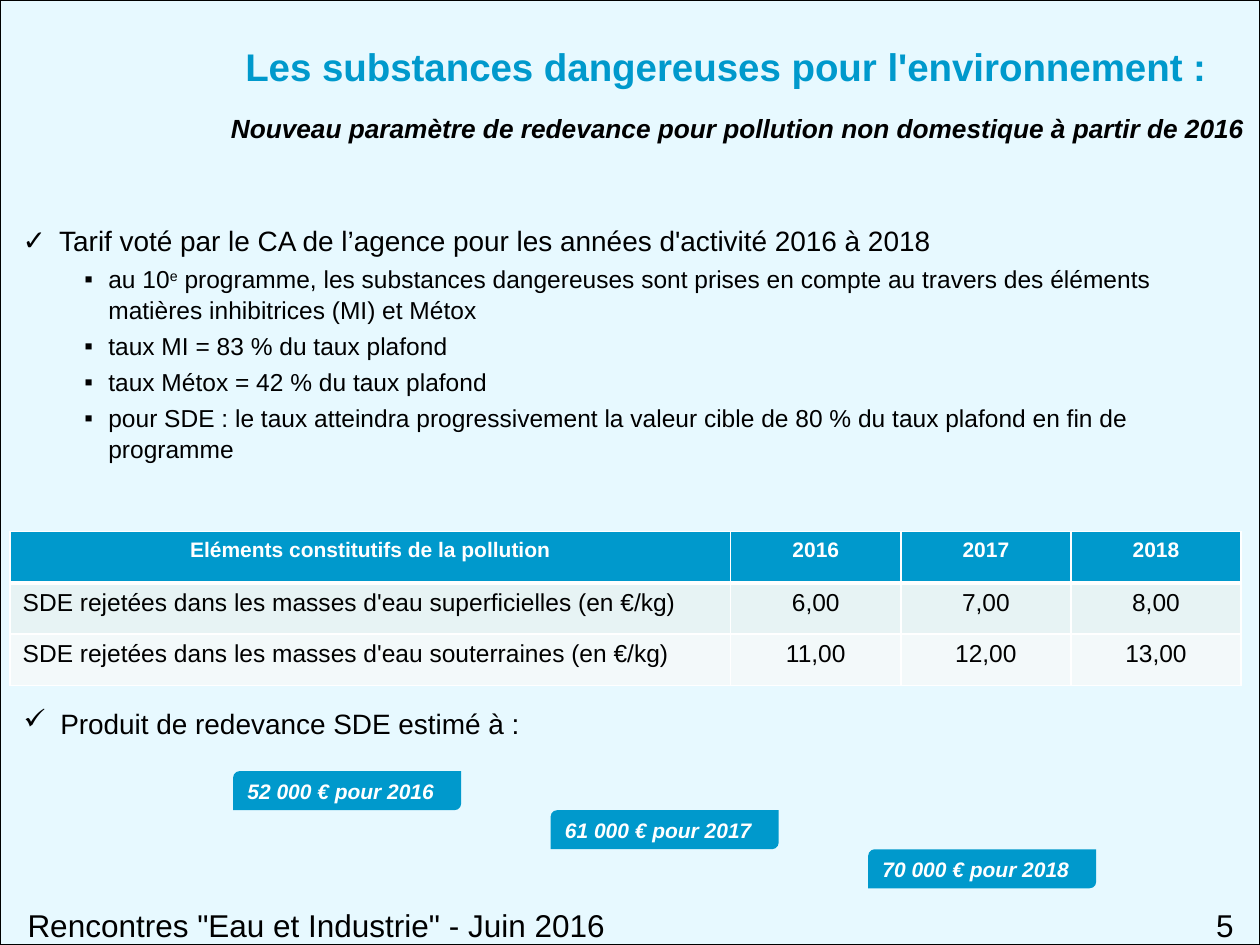
"""Build the slide on the SDE pollution charge: rates, table and estimated income."""
import pptx
import pptx.dml.color
import pptx.enum.shapes
import pptx.enum.text
import pptx.oxml.ns
import pptx.util
from lxml import etree

Inches, Pt = pptx.util.Inches, pptx.util.Pt
RGBColor = pptx.dml.color.RGBColor
SHAPE = pptx.enum.shapes.MSO_SHAPE
ALIGN = pptx.enum.text.PP_ALIGN
ANCHOR = pptx.enum.text.MSO_ANCHOR
qn = pptx.oxml.ns.qn

BLUE = RGBColor(0x00, 0x99, 0xCC)
PALE = RGBColor(0xE7, 0xF9, 0xFF)
BLACK = RGBColor(0, 0, 0)
WHITE = RGBColor(0xFF, 0xFF, 0xFF)
ROW_FILLS = [BLUE, RGBColor(0xE7, 0xF3, 0xF4), RGBColor(0xF3, 0xF9, 0xFA)]

TITLE = "Les substances dangereuses pour l'environnement : "
SUBTITLE = "Nouveau paramètre de redevance pour pollution non domestique à partir de 2016"
HEADING = "Tarif voté par le CA de l’agence pour les années d'activité 2016 à 2018"
POINTS = [
    ("au 10", "e", " programme, les substances dangereuses sont prises en compte "
     "au travers des éléments matières inhibitrices (MI) et Métox"),
    ("taux MI = 83 % du taux plafond",),
    ("taux Métox = 42 % du taux plafond",),
    ("pour SDE : le taux atteindra progressivement la valeur cible de 80 % "
     "du taux plafond en fin de programme",),
]
TABLE = [
    ("Eléments constitutifs de la pollution", "2016", "2017", "2018"),
    ("SDE rejetées dans les masses d'eau superficielles (en €/kg)", "6,00", "7,00", "8,00"),
    ("SDE rejetées dans les masses d'eau souterraines (en €/kg)", "11,00", "12,00", "13,00"),
]
COLUMNS = [5.72, 1.35, 1.35, 1.35]
INCOME_LABEL = "Produit de redevance SDE estimé à :"
INCOME = ["52 000 € pour 2016", "61 000 € pour 2017", "70 000 € pour 2018"]
FOOTER = 'Rencontres "Eau et Industrie" - Juin 2016'
NUMBER = "5"

HEAD_FORMAT = {"size": Pt(12), "bold": True}
CELL_FORMAT = {"size": Pt(14), "bold": False}
CHECK = {"bullet": "✓", "margin": 0.29, "hang": -0.29}
SQUARE = {"bullet": "▪", "margin": 0.68, "hang": -0.19}


def place(sp, left, top, width, height):
    for name, value in zip(("left", "top", "width", "height"), (left, top, width, height)):
        setattr(sp, name, Inches(value))


def frame(sp, anchor=ANCHOR.TOP):
    tf = sp.text_frame
    values = {"word_wrap": True, "auto_size": pptx.enum.text.MSO_AUTO_SIZE.NONE,
              "vertical_anchor": anchor}
    for name, value in values.items():
        setattr(tf, name, value)
    return tf


def write(p, parts, color=BLACK, align=ALIGN.LEFT, before=0, **font):
    for name, value in {"alignment": align, "space_before": Pt(before),
                        "space_after": Pt(0)}.items():
        setattr(p, name, value)
    for text in parts:
        r = p.add_run()
        r.text = text
        for name, value in {"name": "Arial", **font}.items():
            setattr(r.font, name, value)
        r.font.color.rgb = color
    return p


def indent(p, margin, hang, bullet=None):
    pPr = p._p.get_or_add_pPr()
    pPr.set("marL", str(Inches(margin)))
    pPr.set("indent", str(Inches(hang)))
    if bullet:
        etree.SubElement(pPr, qn("a:buChar")).set("char", bullet)
    else:
        etree.SubElement(pPr, qn("a:buNone"))


def border(cell, **widths):
    tcPr = cell._tc.get_or_add_tcPr()
    for i, (side, width) in enumerate(widths.items()):
        ln = etree.Element(qn("a:ln" + side), w=str(Pt(width)))
        fill = etree.SubElement(ln, qn("a:solidFill"))
        etree.SubElement(fill, qn("a:srgbClr")).set("val", str(WHITE))
        tcPr.insert(i, ln)


def add_text(s, box, text, **values):
    sp = s.shapes.add_textbox(*map(Inches, box))
    return write(frame(sp).paragraphs[0], [text], **values)


def add_shape(s, kind, box, color):
    sp = s.shapes.add_shape(kind, *map(Inches, box))
    sp.shadow.inherit = False
    sp.fill.solid()
    sp.fill.fore_color.rgb = color
    sp.line.fill.background()
    return sp


def add_headings(s):
    title, body, subtitle = s.placeholders
    back = add_shape(s, SHAPE.RECTANGLE, (0, 0, 10, 7.5), PALE)
    back.line.color.rgb = BLACK
    back.line.width = Pt(1)
    title.element.addprevious(back.element)

    place(title, 1.75, 0.29, 8.11, 0.47)
    write(frame(title, ANCHOR.MIDDLE).paragraphs[0], [TITLE], BLUE, ALIGN.CENTER,
          size=Pt(22), bold=True)
    place(subtitle, 1.61, 0.84, 8.39, 0.35)
    p = write(frame(subtitle).paragraphs[0], [SUBTITLE], align=ALIGN.CENTER,
              size=Pt(15), bold=True, italic=True)
    indent(p, 0.39, -0.29)
    return body


def add_points(body):
    place(body, 0.08, 1.78, 9.76, 1.95)
    tf = frame(body, ANCHOR.BOTTOM)
    p = write(tf.paragraphs[0], [HEADING], size=Pt(16))
    p.line_spacing = 1.05
    indent(p, **CHECK)
    for parts in POINTS:
        p = tf.add_paragraph()
        p.level = 1
        write(p, parts, before=3, size=Pt(14))
        p.line_spacing = 1.05
        indent(p, **SQUARE)
        for r in p.runs[1:2]:
            r._r.get_or_add_rPr().set("baseline", "30000")


def add_rates(s):
    box = (0.08, 4.22, sum(COLUMNS), 1.22)
    table = s.shapes.add_table(len(TABLE), len(COLUMNS), *map(Inches, box)).table
    for column, width in zip(table.columns, COLUMNS):
        column.width = Inches(width)
    for i, row in enumerate(TABLE):
        for j, text in enumerate(row):
            cell = table.cell(i, j)
            cell.fill.solid()
            cell.fill.fore_color.rgb = ROW_FILLS[i]
            border(cell, L=1, R=1, T=3 if i == 1 else 1, B=3 if i == 0 else 1)
            write(cell.text_frame.paragraphs[0], [text], BLACK if i else WHITE,
                  ALIGN.LEFT if i and not j else ALIGN.CENTER,
                  **(CELL_FORMAT if i else HEAD_FORMAT))


def add_income(s):
    indent(add_text(s, (0.09, 5.56, 4.36, 0.37), INCOME_LABEL, size=Pt(16)), **CHECK)
    for i, text in enumerate(INCOME):
        box = (1.85 + 2.52 * i, 6.12 + 0.31 * i, 1.81, 0.31)
        sp = add_shape(s, SHAPE.ROUND_2_DIAG_RECTANGLE, box, BLUE)
        write(frame(sp, ANCHOR.MIDDLE).paragraphs[0], [text], WHITE,
              size=Pt(12), bold=True, italic=True)


def main():
    prs = pptx.Presentation()
    prs.slide_width, prs.slide_height = Inches(10), Inches(7.5)
    s = prs.slides.add_slide(prs.slide_layouts.get_by_name("Two Content"))
    add_points(add_headings(s))
    add_rates(s)
    add_income(s)
    add_text(s, (0.12, 7.14, 5.12, 0.3), FOOTER, size=Pt(18))
    add_text(s, (8.93, 7.14, 0.96, 0.29), NUMBER, align=ALIGN.RIGHT, size=Pt(18))
    prs.save("out.pptx")


if __name__ == "__main__":
    main()
